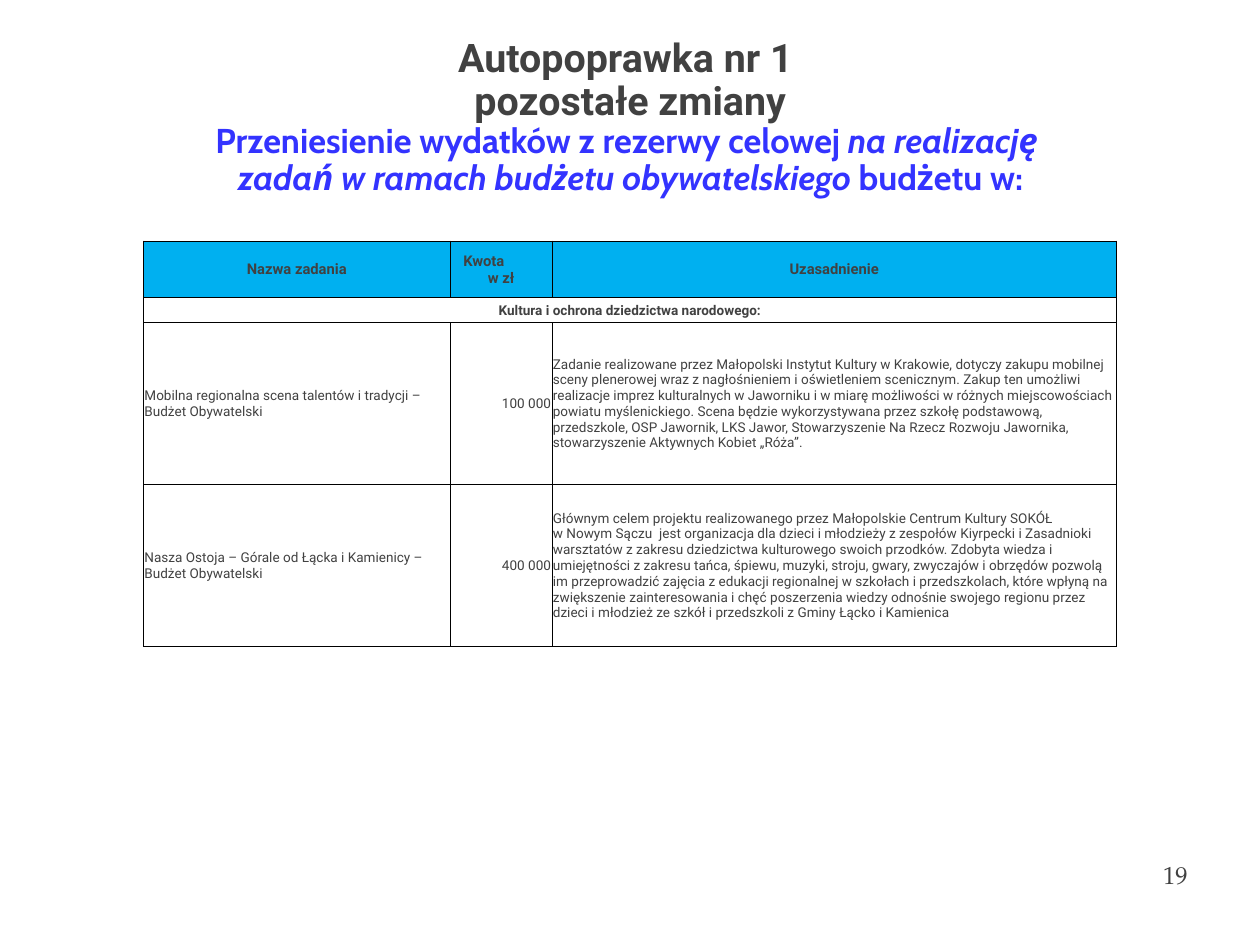
from dataclasses import dataclass

import pptx
import pptx.dml.color
import pptx.enum.text
import pptx.oxml
import pptx.oxml.ns
import pptx.util

Inches = pptx.util.Inches
Pt = pptx.util.Pt
RGBColor = pptx.dml.color.RGBColor
Align = pptx.enum.text.PP_ALIGN
Anchor = pptx.enum.text.MSO_ANCHOR

GREY = RGBColor(0x41, 0x41, 0x41)
BLUE = RGBColor(0x33, 0x33, 0xFF)
SKY = RGBColor(0x00, 0xB0, 0xF0)
BLACK = RGBColor(0x00, 0x00, 0x00)


@dataclass(frozen=True)
class Style:
    font: str
    size: float
    color: RGBColor = GREY
    bold: bool = False
    italic: bool = False


@dataclass(frozen=True)
class Span:
    text: str
    style: Style


@dataclass(frozen=True)
class Task:
    name: str
    amount: str
    reason: str


HEADING = Style("Roboto", 32, bold=True)
SUBTITLE = Style("Cabin", 28, BLUE, bold=True)
SUBTITLE_ITALIC = Style("Cabin", 28, BLUE, bold=True, italic=True)
PAGE_NUMBER = Style("TeX Gyre Pagella", 20)
COLUMN_HEADER = Style("Roboto", 12, bold=True)
SECTION = Style("Roboto", 11, bold=True)
BODY = Style("Roboto", 11)

TITLE_LINES = [
    [Span("Autopoprawka nr 1 ", HEADING)],
    [Span("pozostałe zmiany", HEADING)],
    [Span("Przeniesienie wydatków z rezerwy celowej ", SUBTITLE),
     Span("na realizację ", SUBTITLE_ITALIC)],
    [Span("zadań w ramach budżetu obywatelskiego ", SUBTITLE_ITALIC),
     Span("budżetu w:", SUBTITLE)],
]
COLUMN_WIDTHS = [3.46, 1.15, 6.37]
ROW_HEIGHTS = [0.64, 0.28, 1.83, 1.83]
HEADERS = ["Nazwa zadania", "Kwota\nw zł", "Uzasadnienie"]
SECTION_NAME = "Kultura i ochrona dziedzictwa narodowego:"
TASKS = [
    Task("Mobilna regionalna scena talentów i tradycji – Budżet Obywatelski",
         "100 000",
         "Zadanie realizowane przez Małopolski Instytut Kultury w Krakowie, dotyczy zakupu "
         "mobilnej sceny plenerowej wraz z nagłośnieniem i oświetleniem scenicznym. Zakup ten "
         "umożliwi realizacje imprez kulturalnych w Jaworniku i w miarę możliwości w różnych "
         "miejscowościach powiatu myślenickiego. Scena będzie wykorzystywana przez szkołę "
         "podstawową, przedszkole, OSP Jawornik, LKS Jawor, Stowarzyszenie Na Rzecz Rozwoju "
         "Jawornika, stowarzyszenie Aktywnych Kobiet „Róża”."),
    Task("Nasza Ostoja – Górale od Łącka i Kamienicy – Budżet Obywatelski",
         "400 000",
         "Głównym celem projektu realizowanego przez Małopolskie Centrum Kultury SOKÓŁ \v"
         "w Nowym Sączu  jest organizacja dla dzieci i młodzieży z zespołów Kiyrpecki i "
         "Zasadnioki warsztatów z zakresu dziedzictwa kulturowego swoich przodków. Zdobyta "
         "wiedza i umiejętności z zakresu tańca, śpiewu, muzyki, stroju, gwary, zwyczajów i "
         "obrzędów pozwolą im przeprowadzić zajęcia z edukacji regionalnej w szkołach i "
         "przedszkolach, które wpłyną na zwiększenie zainteresowania i chęć poszerzenia wiedzy "
         "odnośnie swojego regionu przez dzieci i młodzież ze szkół i przedszkoli z Gminy "
         "Łącko i Kamienica"),
]


def apply_style(font, style: Style) -> None:
    font.name = style.font
    font.size = Pt(style.size)
    font.bold = style.bold
    font.italic = style.italic
    font.color.rgb = style.color


def add_text_box(page, left: float, top: float, width: float, height: float, inset: float):
    box = page.shapes.add_textbox(Inches(left), Inches(top), Inches(width), Inches(height))
    frame = box.text_frame
    frame.word_wrap = True
    frame.vertical_anchor = Anchor.MIDDLE
    frame.margin_left = frame.margin_right = Inches(inset)
    frame.margin_top = frame.margin_bottom = Inches(inset)
    frame.paragraphs[0].alignment = Align.CENTER
    return frame


def add_title(page) -> None:
    frame = add_text_box(page, 0.56, 0.88, 13.11, 1.33, 0)
    frame.margin_bottom = Inches(0.42)
    para = frame.paragraphs[0]
    para.line_spacing = 0.9
    for index, line in enumerate(TITLE_LINES):
        if index:
            para.add_line_break()
        for span in line:
            run = para.add_run()
            run.text = span.text
            apply_style(run.font, span.style)


def set_border(cell, side: str, width: float) -> None:
    """Draw one side (L, R, T or B) of a cell in black."""
    cell._tc.get_or_add_tcPr().append(pptx.oxml.parse_xml(
        f'<a:ln{side} {pptx.oxml.ns.nsdecls("a")} w="{Pt(width)}">'
        f'<a:solidFill><a:srgbClr val="{BLACK}"/></a:solidFill></a:ln{side}>'))


def fill_cell(cell, text: str, style: Style, alignment: Align) -> None:
    cell.text_frame.text = text
    cell.vertical_anchor = Anchor.MIDDLE
    cell.margin_left = cell.margin_right = cell.margin_top = Inches(0.01)
    cell.margin_bottom = 0
    for para in cell.text_frame.paragraphs:
        para.alignment = alignment
        for run in para.runs:
            apply_style(run.font, style)


def add_task_table(page) -> None:
    table = page.shapes.add_table(
        len(ROW_HEIGHTS), len(COLUMN_WIDTHS), Inches(1.62), Inches(2.72),
        Inches(sum(COLUMN_WIDTHS)), Inches(sum(ROW_HEIGHTS))).table
    table.first_row = table.horz_banding = False
    for column, width in zip(table.columns, COLUMN_WIDTHS):
        column.width = Inches(width)
    for row, height in zip(table.rows, ROW_HEIGHTS):
        row.height = Inches(height)

    last = len(COLUMN_WIDTHS) - 1
    for row_index in range(len(ROW_HEIGHTS)):
        for column_index in range(len(COLUMN_WIDTHS)):
            cell = table.cell(row_index, column_index)
            set_border(cell, "L", 1 if row_index and column_index == 0 else 0.5)
            set_border(cell, "R", 1 if row_index and column_index == last else 0.5)
            set_border(cell, "T", 0.5)
            set_border(cell, "B", 0.5)
            if row_index == 0:
                cell.fill.solid()
                cell.fill.fore_color.rgb = SKY
            else:
                cell.fill.background()

    for column_index, header in enumerate(HEADERS):
        fill_cell(table.cell(0, column_index), header, COLUMN_HEADER, Align.CENTER)
    amount_line = table.cell(0, 1).text_frame.paragraphs[0]
    amount_line.alignment = Align.LEFT
    amount_line._p.get_or_add_pPr().set("marL", str(Inches(0.14)))

    table.cell(1, 0).merge(table.cell(1, last))
    fill_cell(table.cell(1, 0), SECTION_NAME, SECTION, Align.CENTER)
    for row_index, task in enumerate(TASKS, start=2):
        fill_cell(table.cell(row_index, 0), task.name, BODY, Align.LEFT)
        fill_cell(table.cell(row_index, 1), task.amount, BODY, Align.RIGHT)
        fill_cell(table.cell(row_index, 2), task.reason, BODY, Align.LEFT)


def add_page_number(page) -> None:
    frame = add_text_box(page, 12.86, 9.65, 0.81, 0.45, 0.06)
    para = frame.paragraphs[0]
    para.text = "19"
    apply_style(para.runs[0].font, PAGE_NUMBER)


def main() -> None:
    deck = pptx.Presentation()
    deck.slide_width = Inches(14.22)
    deck.slide_height = Inches(10.67)
    page = deck.slides.add_slide(deck.slide_layouts[6])
    add_page_number(page)
    add_title(page)
    add_task_table(page)
    deck.save("out.pptx")


if __name__ == "__main__":
    main()
